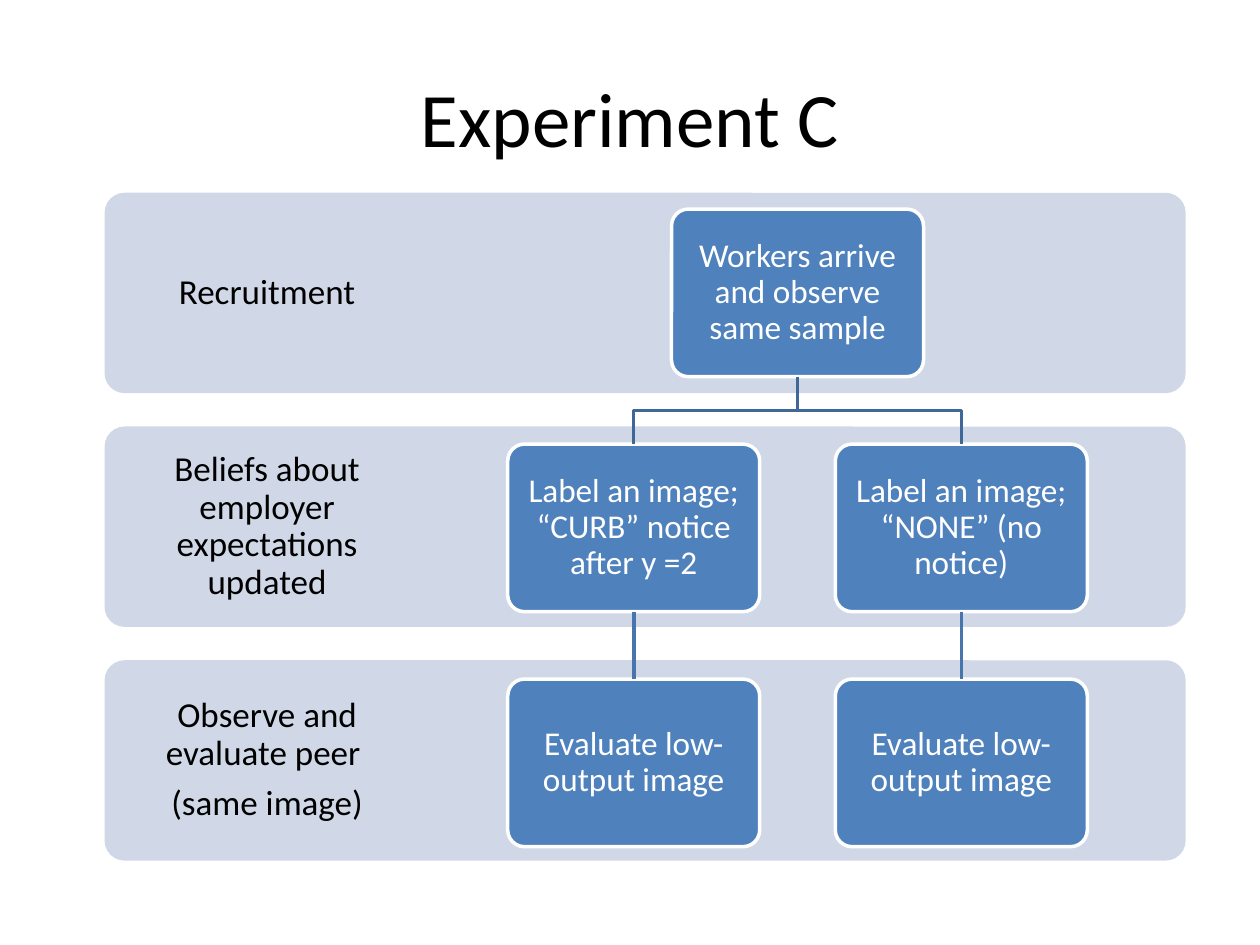
import pptx
import pptx.util
import pptx.dml.color
import pptx.enum.shapes
import pptx.enum.text
import pptx.oxml

Inches, Pt = pptx.util.Inches, pptx.util.Pt
ROUNDED = pptx.enum.shapes.MSO_SHAPE.ROUNDED_RECTANGLE


def paint(color_format, hex_color):
    color_format.rgb = pptx.dml.color.RGBColor.from_string(hex_color)


def write(shape, text, size, hex_color, inset):
    frame = shape.text_frame
    frame.text = text
    frame.word_wrap = True
    frame.vertical_anchor = pptx.enum.text.MSO_ANCHOR.MIDDLE
    frame.margin_left = frame.margin_right = Inches(inset)
    frame.margin_top = frame.margin_bottom = Inches(inset)
    for paragraph in frame.paragraphs:
        paragraph.alignment = pptx.enum.text.PP_ALIGN.CENTER
        paragraph.line_spacing = 0.9
        paragraph.space_after = Pt(size * 0.35)
        for run in paragraph.runs:
            run.font.name = "Calibri"
            run.font.size = Pt(size)
            paint(run.font.color, hex_color)


prs = pptx.Presentation()
prs.slide_width, prs.slide_height = Inches(10), Inches(7.5)
slide = prs.slides.add_slide(prs.slide_layouts[5])
shapes = slide.shapes

title = shapes.title
title.left, title.top, title.width, title.height = Inches(0.5), Inches(0.3), Inches(9), Inches(1.25)
write(title, "Experiment C", 44, "000000", 0.1)
title.text_frame.paragraphs[0].line_spacing = 1.0
title.text_frame.paragraphs[0].space_after = Pt(0)

stages = [
    "Recruitment",
    "Beliefs about employer expectations updated",
    "Observe and evaluate peer \n(same image)",
]
band_left, band_top, band_pitch, band_height = 0.83, 1.53, 1.855, 1.59
for row, stage in enumerate(stages):
    top = Inches(band_top + row * band_pitch)
    band = shapes.add_shape(ROUNDED, Inches(band_left), top, Inches(8.58), Inches(band_height))
    band.adjustments[0] = 0.1
    band.shadow.inherit = False
    band.fill.solid()
    paint(band.fill.fore_color, "D0D8E8")
    band.line.fill.background()
    label = shapes.add_textbox(Inches(band_left), top, Inches(2.58), Inches(band_height))
    write(label, stage, 20, "000000", 0.16)

box_top, box_pitch, box_width, box_height = 1.66, 1.865, 2, 1.33
root_center, curb_center, none_center = 6.33, 5.03, 7.63
steps = [
    (root_center, 0, "Workers arrive and observe same sample"),
    (curb_center, 1, "Label an image; “CURB” notice after y =2"),
    (curb_center, 2, "Evaluate low-output image"),
    (none_center, 1, "Label an image; “NONE” (no notice)"),
    (none_center, 2, "Evaluate low-output image"),
]
boxes = {}
for center, row, text in steps:
    box = shapes.add_shape(ROUNDED, Inches(center - box_width / 2), Inches(box_top + row * box_pitch),
                           Inches(box_width), Inches(box_height))
    box.adjustments[0] = 0.1
    box.shadow.inherit = False
    box.fill.solid()
    paint(box.fill.fore_color, "4F81BD")
    paint(box.line.color, "FFFFFF")
    box.line.width = Pt(2)
    write(box, text, 19, "FFFFFF", 0.12)
    boxes[center, row] = box

root_bottom = box_top + box_height
child_top = box_top + box_pitch
fork = (root_bottom + child_top) / 2
for center in (curb_center, none_center):
    builder = shapes.build_freeform(Inches(root_center), Inches(root_bottom))
    builder.add_line_segments(
        [(Inches(x), Inches(y)) for x, y in ((root_center, fork), (center, fork), (center, child_top))],
        close=False)
    branch = builder.convert_to_shape()
    branch.shadow.inherit = False
    branch.fill.background()
    paint(branch.line.color, "3F6797")
    branch.line.width = Pt(2)

    drop = shapes.add_connector(pptx.enum.shapes.MSO_CONNECTOR.STRAIGHT, 0, 0, 0, 0)
    drop.begin_connect(boxes[center, 1], 2)
    drop.end_connect(boxes[center, 2], 0)
    paint(drop.line.color, "4875AC")
    drop.line.width = Pt(2)
    drop._element.spPr.append(pptx.oxml.parse_xml(
        '<a:effectLst xmlns:a="http://schemas.openxmlformats.org/drawingml/2006/main"/>'))

prs.save("out.pptx")
